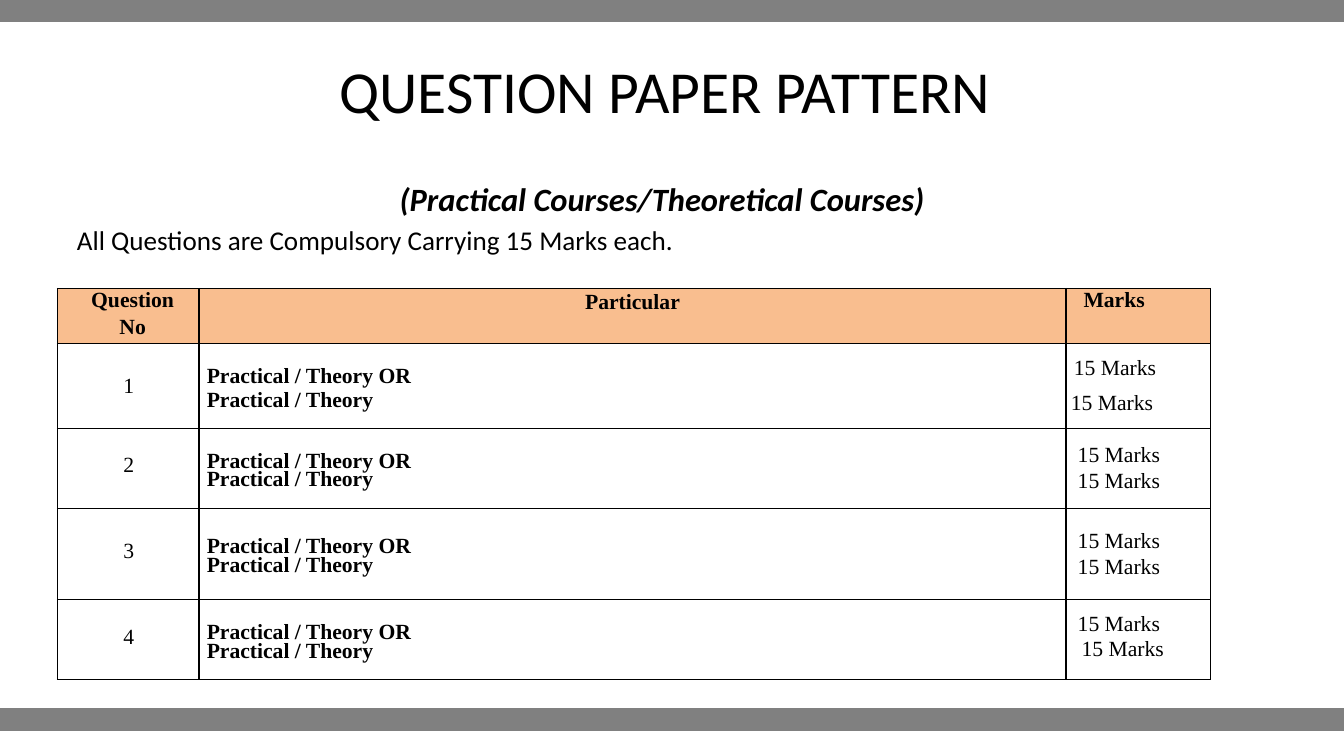
from lxml.etree import SubElement
from pptx import Presentation
from pptx.dml.color import RGBColor
from pptx.enum.shapes import MSO_SHAPE
from pptx.enum.text import MSO_ANCHOR, MSO_AUTO_SIZE, PP_ALIGN
from pptx.oxml.ns import qn
from pptx.util import Emu, Pt

WIDE, HIGH = 1378, 750
BLACK, GREY, PEACH = "000000", "808080", "F9BE8F"
MID, LEFT = PP_ALIGN.CENTER, PP_ALIGN.LEFT
SERIF = {"name": "Times New Roman", "size": Pt(16)}
BOLD, PLAIN = {**SERIF, "bold": True}, {**SERIF, "bold": False}
COLS = (145, 889, 148)
ROWS = (43, 87, 82, 94, 82)


def px(num):
    """Turn px, one hundred to the inch, into EMU."""
    return Emu(num * 9144)


def tint(code):
    """Turn a hex string into a colour."""
    return RGBColor.from_string(code)


def style(item, form):
    """Set each format value on the item."""
    for key, value in form.items():
        setattr(item, key, value)


def line(text, font, align=LEFT, inset=0, before=0, space=None):
    """Describe one paragraph."""
    form = {"alignment": align, "space_before": Pt(before), "line_spacing": space}
    return text, font, form, inset


def write(frame, lines):
    """Fill a text frame with the described paragraphs."""
    for num, (text, font, form, inset) in enumerate(lines):
        para = frame.add_paragraph() if num else frame.paragraphs[0]
        style(para, form)
        para._p.get_or_add_pPr().set("marL", str(px(inset)))
        run = para.add_run()
        run.text = text
        style(run.font, font)
        run.font.color.rgb = tint(BLACK)


def head(slide, box):
    """Place and fill the title."""
    title = slide.shapes.title
    style(title, dict(zip(("left", "top", "width", "height"), map(px, box))))
    style(title.text_frame, {"word_wrap": True, "auto_size": MSO_AUTO_SIZE.NONE,
                             "vertical_anchor": MSO_ANCHOR.MIDDLE})
    font = {"name": "Calibri", "size": Pt(44)}
    write(title.text_frame, [line("QUESTION PAPER PATTERN ", font, MID)])


def intro(slide, box):
    """Place the subtitle and the rule on marks."""
    frame = slide.shapes.add_textbox(*map(px, box)).text_frame
    frame.word_wrap = True
    lead = {"name": "Calibri", "size": Pt(24), "bold": True, "italic": True}
    note = {"name": "Calibri", "size": Pt(20)}
    write(frame, [
        line("(Practical Courses/Theoretical Courses) ", lead, MID, before=5),
        line("All Questions are Compulsory Carrying 15 Marks each.", note, before=4),
    ])


def frame_cell(cell, fill):
    """Give a cell black borders, no margins and its fill."""
    style(cell, dict.fromkeys(
        ("margin_left", "margin_right", "margin_top", "margin_bottom"), 0))
    props = cell._tc.get_or_add_tcPr()
    for side in ("lnL", "lnR", "lnT", "lnB"):
        edge = SubElement(props, qn("a:" + side), w=str(Pt(1)))
        ink = SubElement(edge, qn("a:solidFill"))
        SubElement(ink, qn("a:srgbClr"), val=BLACK)
    if fill:
        cell.fill.solid()
        cell.fill.fore_color.rgb = tint(fill)
    else:
        cell.fill.background()


def entry(num):
    """Describe the three cells of one question."""
    first = num == 1
    spaces = {"before": 8} if first else {"space": Pt(13.4)}
    tops = {"before": 3, "space": 1.21} if first else {"before": 2, "space": 1.15}
    ends = {"before": 0.1} if first else {"space": Pt(13.7)}
    start = {"space": Pt(13.4)} if num == 4 else {"before": 8}
    inset = 8 if first else 12
    last = {1: {"inset": 5, "before": 8.3}, 4: {"inset": 16}}.get(
        num, {"inset": 12, "space": Pt(19.5)})
    return (
        [line(str(num), PLAIN, MID, 1, **spaces)],
        [line("Practical / Theory OR", BOLD, inset=8, **tops),
         line("Practical / Theory", BOLD, inset=8, **ends)],
        [line("15 Marks", PLAIN, inset=inset, **start),
         line("15 Marks", PLAIN, **last)],
    )


def grid(slide, left, top):
    """Build the table of questions and marks."""
    table = slide.shapes.add_table(
        len(ROWS), len(COLS), px(left), px(top), px(sum(COLS)), px(sum(ROWS))).table
    style(table, {"first_row": False, "horz_banding": False})
    for col, wide in zip(table.columns, COLS):
        col.width = px(wide)
    names = (
        [line("Question", BOLD, MID, 9, 0.4), line("No", BOLD, MID, 9, 2.2)],
        [line("Particular", BOLD, MID, 0, 0.4, 1.05)],
        [line("Marks", BOLD, LEFT, 18, 0.4)],
    )
    for num, high in enumerate(ROWS):
        row = table.rows[num]
        row.height = px(high)
        for cell, lines in zip(row.cells, entry(num) if num else names):
            frame_cell(cell, None if num else PEACH)
            cell.vertical_anchor = MSO_ANCHOR.MIDDLE if num else MSO_ANCHOR.TOP
            write(cell.text_frame, lines)


def band(slide, box):
    """Draw one grey band across the slide."""
    bar = slide.shapes.add_shape(MSO_SHAPE.RECTANGLE, *map(px, box))
    bar.shadow.inherit = False
    bar.fill.solid()
    bar.fill.fore_color.rgb = bar.line.color.rgb = tint(GREY)
    bar.line.width = Pt(2)


def main():
    """Build and save the slide."""
    deck = Presentation()
    style(deck, {"slide_width": px(WIDE), "slide_height": px(HIGH)})
    slide = deck.slides.add_slide(deck.slide_layouts[5])
    head(slide, (69, 30, 1240, 125))
    intro(slide, (69, 179, 1227, 100))
    grid(slide, 59, 296)
    for top in (0, 728):
        band(slide, (0, top, WIDE, 21))
    deck.save("out.pptx")


if __name__ == "__main__":
    main()
